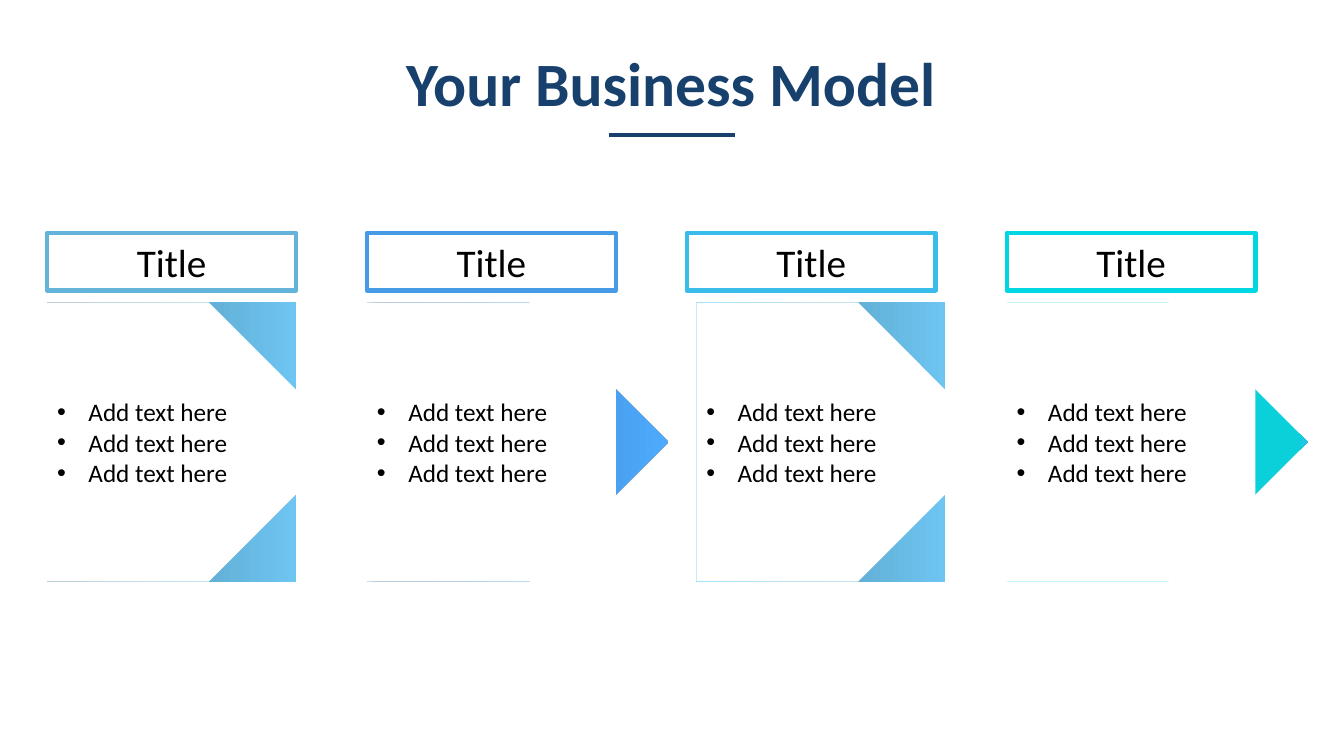
from dataclasses import dataclass

from lxml.etree import SubElement
from pptx import Presentation
from pptx.dml.color import RGBColor
from pptx.enum.shapes import MSO_CONNECTOR, MSO_SHAPE
from pptx.enum.text import MSO_ANCHOR, MSO_AUTO_SIZE, PP_ALIGN
from pptx.oxml.ns import qn
from pptx.util import Cm, Pt


@dataclass(frozen=True)
class Theme:
    font: str = "Calibri"
    navy: str = "17406D"
    ink: str = "000000"
    paper: str = "FFFFFF"
    head: int = 44
    label: int = 28
    body: int = 18
    rule: int = 3


THEME = Theme()
RECT, PLATE = MSO_SHAPE.RECTANGLE, MSO_SHAPE.PENTAGON
WIDE, FULL = 6.27, 7.59  # widths of a rectangle and of an arrow plate
ITEMS = ["Add text here"] * 3

# Label colour, back outline, front outline, card shift, gradient stops
STEPS = [
    ("63B3DB", RECT, PLATE, 0, [(0, "41758F"), (50, "5DA6CB"), (100, "6EC5F1")]),
    ("469AE6", PLATE, RECT, 0, [(0, "2E6596"), (50, "428FD6"), (100, "4EAAFE")]),
    ("3ABCEB", RECT, PLATE, 0.24, [(0, "00B0F0"), (50, "5DA6CB"), (100, "6EC5F1")]),
    ("00D7E3", PLATE, RECT, 0, [(97, "0BD0D9"), (100, "2DBDEC"), (100, "4EAAFE")]),
]


def apply(item, style):
    for name, value in style.items():
        setattr(item, name, value)


def color(code):
    return RGBColor.from_string(code)


def write(frame, lines, size, tint, align, bold=False, bullet=False):
    for i, line in enumerate(lines):
        para = frame.paragraphs[0] if i == 0 else frame.add_paragraph()
        para.alignment = align
        run = para.add_run()
        run.text = line
        apply(run.font, {"name": THEME.font, "size": Pt(size), "bold": bold})
        run.font.color.rgb = color(tint)
        if bullet:
            props = para._p.get_or_add_pPr()
            props.set("marL", str(Cm(0.79)))
            props.set("indent", str(-Cm(0.79)))
            SubElement(props, qn("a:buFont")).set("typeface", "Arial")
            SubElement(props, qn("a:buChar")).set("char", "•")


def blend(shape, stops):
    """Fill a shape from left to right with any number of stops."""
    shape.fill.gradient()
    shape.fill.gradient_angle = 0
    track = shape._element.spPr.find(qn("a:gradFill")).find(qn("a:gsLst"))
    for old in list(track):
        track.remove(old)
    for place, code in stops:
        stop = SubElement(track, qn("a:gs"), pos=str(place * 1000))
        SubElement(stop, qn("a:srgbClr"), val=code)


def block(shapes, kind, x, y, w, h):
    shape = shapes.add_shape(kind, Cm(x), Cm(y), Cm(w), Cm(h))
    shape.shadow.inherit = False
    shape.line.fill.background()
    return shape


def header(slide, x, y, w, h):
    # Heading
    box = slide.shapes.add_textbox(Cm(x), Cm(y), Cm(w), Cm(h))
    apply(box.text_frame, {
        "word_wrap": True, "vertical_anchor": MSO_ANCHOR.MIDDLE,
        "margin_left": 0, "margin_right": 0, "margin_top": 0, "margin_bottom": 0,
    })
    write(box.text_frame, ["Your Business Model"], THEME.head, THEME.navy,
          PP_ALIGN.CENTER, bold=True)
    box.text_frame.paragraphs[0].line_spacing = 0.9

    # Short rule below it
    left, top = x + 13.92, y + h + 0.3
    rule = slide.shapes.add_connector(
        MSO_CONNECTOR.STRAIGHT, Cm(left), Cm(top), Cm(left + 3.18), Cm(top))
    rule.line.color.rgb = color(THEME.navy)
    rule.line.width = Pt(THEME.rule)
    SubElement(rule._element.spPr, qn("a:effectLst"))


def label(slide, tint, x, y, w, h):
    box = block(slide.shapes, RECT, x, y, w, h)
    box.fill.background()
    box.line.color.rgb = color(tint)
    box.line.width = Pt(THEME.rule)
    apply(box.text_frame, {"word_wrap": True, "vertical_anchor": MSO_ANCHOR.TOP,
                           "auto_size": MSO_AUTO_SIZE.SHAPE_TO_FIT_TEXT})
    write(box.text_frame, ["Title"], THEME.label, THEME.ink, PP_ALIGN.CENTER)


def card(slide, back, front, stops, x, y, h):
    width = {RECT: WIDE, PLATE: FULL}
    group = slide.shapes.add_group_shape()
    blend(block(group.shapes, back, x, y, width[back], h), stops)
    face = block(group.shapes, front, x, y, width[front], h)
    face.fill.solid()
    face.fill.fore_color.rgb = color(THEME.paper)
    apply(face.text_frame, {"word_wrap": True,
                            "vertical_anchor": MSO_ANCHOR.MIDDLE})
    write(face.text_frame, ITEMS, THEME.body, THEME.ink, PP_ALIGN.LEFT, bullet=True)


def model(slide, x, y, pitch):
    for i, (tint, back, front, shift, stops) in enumerate(STEPS):
        left = x + i * pitch
        label(slide, tint, left, y, WIDE, 1.45)
        card(slide, back, front, stops, left + shift, y + 1.75, 7.04)


def main():
    deck = Presentation()
    apply(deck, {"slide_width": Cm(33.87), "slide_height": Cm(19.05)})
    slide = deck.slides.add_slide(deck.slide_layouts[6])
    header(slide, 1.42, 1.27, 30.99, 1.83)
    model(slide, 1.19, 5.87, 8.06)
    deck.save("out.pptx")


if __name__ == "__main__":
    main()
